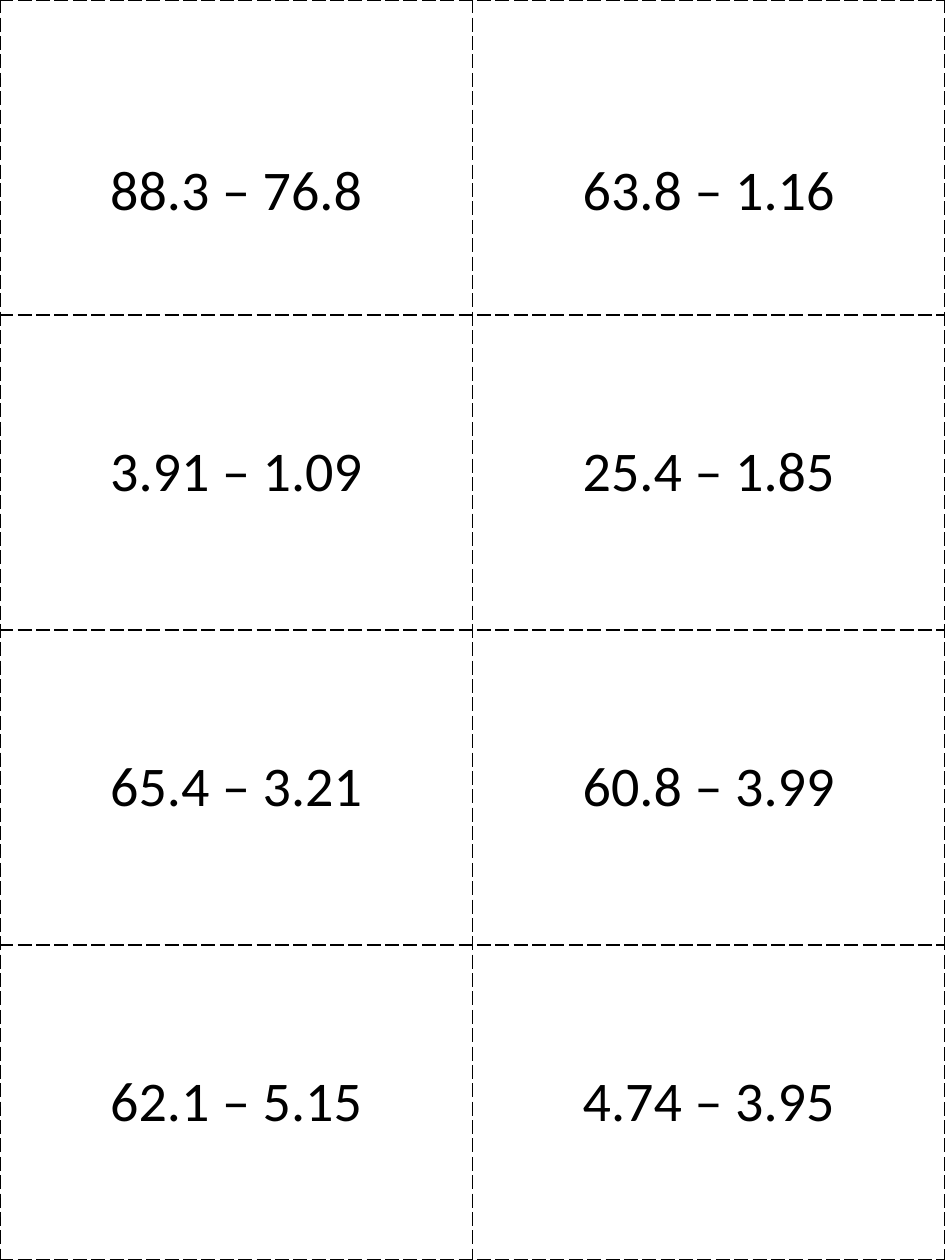
from dataclasses import dataclass

import lxml.etree
import pptx
import pptx.dml.color
import pptx.enum.text
import pptx.oxml.ns
import pptx.table
import pptx.util


@dataclass(frozen=True)
class Theme:
    font: str = "Calibri"
    size: float = 32
    ink: str = "000000"
    paper: str = "FFFFFF"
    border_width: float = 1
    border_dash: str = "lgDash"


@dataclass(frozen=True)
class Card:
    column: int
    row: int
    problem: str
    top_margin: float = 0.05


THEME = Theme()
SLIDE_WIDTH, SLIDE_HEIGHT = 7.5, 10
COLUMNS, ROWS = 2, 4
LOWERED_MARGIN = 0.59
CARDS = [
    Card(0, 0, "88.3 – 76.8", LOWERED_MARGIN),
    Card(1, 0, "63.8 – 1.16", LOWERED_MARGIN),
    Card(0, 1, "3.91 – 1.09"),
    Card(1, 1, "25.4 – 1.85"),
    Card(0, 2, "65.4 – 3.21"),
    Card(1, 2, "60.8 – 3.99"),
    Card(0, 3, "62.1 – 5.15"),
    Card(1, 3, "4.74 – 3.95"),
]


def write_text(text_frame, text: str, *, size: float, color: str, font: str) -> None:
    paragraph = text_frame.paragraphs[0]
    paragraph.alignment = pptx.enum.text.PP_ALIGN.CENTER
    run = paragraph.add_run()
    run.text = text
    run.font.name = font
    run.font.size = pptx.util.Pt(size)
    run.font.color.rgb = pptx.dml.color.RGBColor.from_string(color)


def add_borders(cell: pptx.table._Cell, theme: Theme) -> None:
    qualify = pptx.oxml.ns.qn
    properties = cell._tc.get_or_add_tcPr()
    for index, side in enumerate(("lnL", "lnR", "lnT", "lnB")):
        line = lxml.etree.Element(
            qualify(f"a:{side}"), w=str(pptx.util.Pt(theme.border_width))
        )
        fill = lxml.etree.SubElement(line, qualify("a:solidFill"))
        lxml.etree.SubElement(fill, qualify("a:srgbClr"), val=theme.ink)
        lxml.etree.SubElement(line, qualify("a:prstDash"), val=theme.border_dash)
        properties.insert(index, line)


def draw_card(table: pptx.table.Table, card: Card, theme: Theme) -> None:
    cell = table.cell(card.row, card.column)
    cell.vertical_anchor = pptx.enum.text.MSO_ANCHOR.MIDDLE
    cell.margin_top = pptx.util.Inches(card.top_margin)
    cell.fill.solid()
    cell.fill.fore_color.rgb = pptx.dml.color.RGBColor.from_string(theme.paper)
    write_text(
        cell.text_frame, card.problem,
        size=theme.size, color=theme.ink, font=theme.font,
    )
    add_borders(cell, theme)


def main() -> None:
    presentation = pptx.Presentation()
    presentation.slide_width = pptx.util.Inches(SLIDE_WIDTH)
    presentation.slide_height = pptx.util.Inches(SLIDE_HEIGHT)
    slide = presentation.slides.add_slide(presentation.slide_layouts[6])
    table = slide.shapes.add_table(
        ROWS, COLUMNS, 0, 0, presentation.slide_width, presentation.slide_height
    ).table
    table.first_row = False
    table.horz_banding = False
    for card in CARDS:
        draw_card(table, card, THEME)
    presentation.save("out.pptx")


if __name__ == "__main__":
    main()
